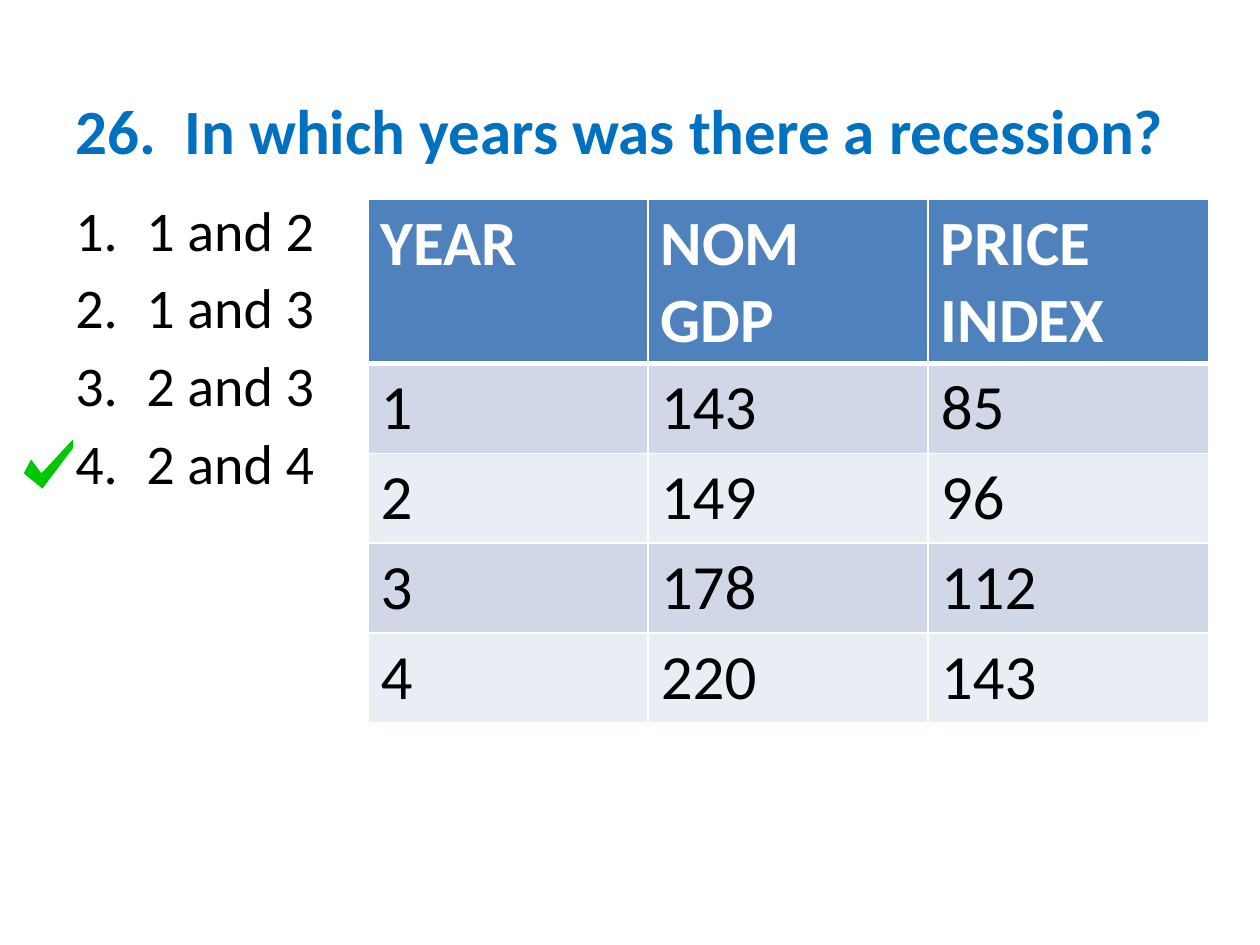
from pptx import Presentation
from pptx.dml.color import RGBColor
from pptx.enum.text import MSO_ANCHOR as Anchor
from pptx.oxml.xmlchemy import OxmlElement as Node
from pptx.util import Cm, Pt

QUERY = "26.  In which years was there a recession?"
CHOICES = ["1 and 2", "1 and 3", "2 and 3", "2 and 4"]
ROWS = [
    ["YEAR", "NOM GDP", "PRICE INDEX"],
    ["1", "143", "85"],
    ["2", "149", "96"],
    ["3", "178", "112"],
    ["4", "220", "143"],
]
HEAD, BANDS = "4F81BD", ["E9EDF4", "D0D8E8"]
HEAD_H, ROW_H = 3.32, 1.81


def color(code):
    return RGBColor.from_string(code)


def style(frame, size, code, bold=False):
    for par in frame.paragraphs:
        for run in par.runs:
            font = run.font
            font.name, font.size, font.bold = "Calibri", Pt(size), bold
            font.color.rgb = color(code)


def add_text(slide, box, text):
    frame = slide.shapes.add_textbox(*map(Cm, box)).text_frame
    frame.word_wrap = True
    frame.text = text
    return frame


def add_title(slide, box):
    frame = add_text(slide, box, QUERY)
    frame.vertical_anchor = Anchor.MIDDLE
    style(frame, 36, "0070C0", bold=True)


def add_choices(slide, box):
    frame = add_text(slide, box, "\n".join(CHOICES))
    for par in frame.paragraphs:
        par.space_before = Pt(6)
        props = par._p.get_or_add_pPr()
        props.set("marL", str(Cm(1.43)))
        props.set("indent", str(Cm(-1.43)))
        num = Node("a:buAutoNum")
        num.set("type", "arabicPeriod")
        props.append(num)
    style(frame, 32, "000000")


def add_edge(cell, side, width):
    line = Node(f"a:ln{side}")
    line.set("w", str(Pt(width)))
    fill, tint = Node("a:solidFill"), Node("a:srgbClr")
    tint.set("val", "FFFFFF")
    fill.append(tint)
    line.append(fill)
    cell._tc.get_or_add_tcPr().append(line)


def add_data(slide, box):
    count = len(ROWS[0])
    table = slide.shapes.add_table(len(ROWS), count, *map(Cm, box)).table
    for col in table.columns:
        col.width = Cm(box[2] / count)
    for i, row in enumerate(ROWS):
        table.rows[i].height = Cm(ROW_H if i else HEAD_H)
        edges = {"L": 1, "R": 1, "T": 3 if i == 1 else 1, "B": 1 if i else 3}
        for j, text in enumerate(row):
            cell = table.cell(i, j)
            for side, width in edges.items():
                add_edge(cell, side, width)
            cell.fill.solid()
            cell.fill.fore_color.rgb = color(BANDS[i % 2] if i else HEAD)
            cell.text = text
            style(cell.text_frame, 36, "000000" if i else "FFFFFF", not i)


def add_check(slide, box):
    """Draw the tick; its points are fractions of the box."""
    left, top, width, height = box
    marks = [(0.15, 0.41), (0, 0.69), (0.38, 1), (1, 0.18), (1, 0), (0.36, 0.69)]
    first, *rest = [(Cm(left + x * width), Cm(top + y * height)) for x, y in marks]
    pen = slide.shapes.build_freeform(*first)
    pen.add_line_segments(rest, close=True)
    tick = pen.convert_to_shape()
    tick.shadow.inherit = False
    tick.fill.solid()
    tick.fill.fore_color.rgb = color("00C800")
    tick.line.fill.background()


def main():
    deck = Presentation()
    deck.slide_width, deck.slide_height = Cm(25.4), Cm(19.05)
    slide = deck.slides.add_slide(deck.slide_layouts[6])
    add_title(slide, (1.27, 0.76, 23.29, 3.68))
    add_data(slide, (7.42, 4.01, 16.94, HEAD_H + 4 * ROW_H))
    add_check(slide, (0.48, 8.86, 0.99, 0.99))
    add_choices(slide, (1.27, 3.81, 5.72, 6.78))
    deck.save("out.pptx")


if __name__ == "__main__":
    main()
